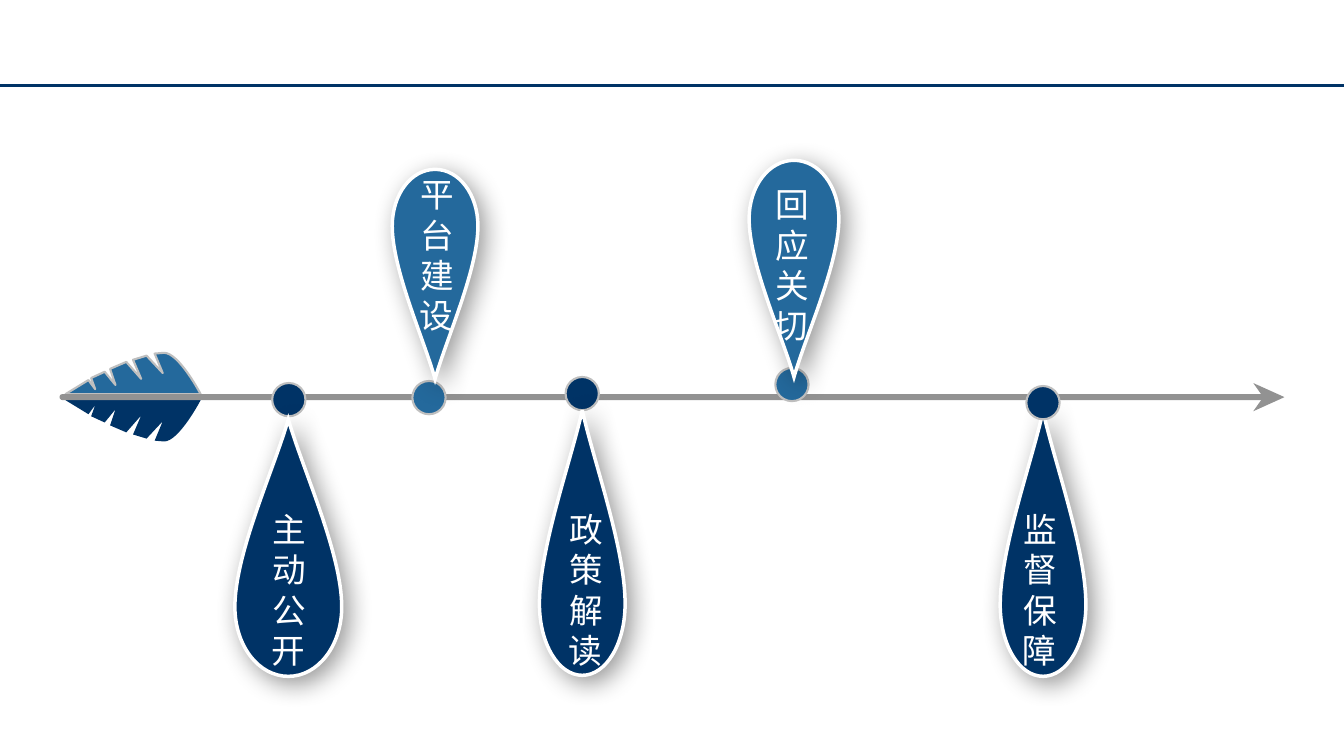
from dataclasses import dataclass

from lxml.etree import SubElement
from pptx import Presentation
from pptx.dml.color import RGBColor
from pptx.enum.shapes import MSO_CONNECTOR, MSO_SHAPE
from pptx.enum.text import MSO_AUTO_SIZE, PP_ALIGN
from pptx.oxml import parse_xml
from pptx.oxml.ns import nsdecls, qn
from pptx.util import Inches, Pt


@dataclass(frozen=True)
class Theme:
    """Colours, font and sizes used on the slide."""
    navy: str = "003366"
    blue: str = "24699C"
    shaft: str = "929292"
    rim: str = "BFBFBF"
    white: str = "FFFFFF"
    font: str = "Noto Sans CJK SC"
    label_size: float = 24
    label_pitch: float = 28.8
    thin: float = 1.5
    rule: float = 2
    thick: float = 2.5


@dataclass(frozen=True)
class Box:
    """A rectangle in inches."""
    left: float
    top: float
    width: float
    height: float

    def lengths(self):
        """Return the four sides as slide lengths."""
        return [Inches(side) for side in (self.left, self.top, self.width, self.height)]

    def corner(self, across, down):
        """Return the place at the given fractions of the box."""
        return Inches(self.left + across * self.width), Inches(self.top + down * self.height)


@dataclass(frozen=True)
class Stop:
    """One labelled stop on the arrow."""
    label: str
    color: str
    dot: Box
    drop: Box
    label_box: Box
    points_down: bool = False
    dot_on_top: bool = False


THEME = Theme()
LABEL_WIDTH, LABEL_HEIGHT, DOT = 0.79, 1.72, 0.33
DROP_START = (0.5, 0)
DROP_SEGMENTS = [
    [(0.37, 0.19), (0, 0.52), (0, 0.73)],
    [(0, 0.88), (0.22, 1), (0.5, 1)],
    [(0.78, 1), (1, 0.88), (1, 0.73)],
    [(1, 0.52), (0.63, 0.19), (0.5, 0)],
]
FEATHER_START = (0.73, 0)
FEATHER_NOTCHES = [
    ((0.66, 0.02), (0.72, 0.49), (0.6, 0.07)),
    ((0.5, 0.17), (0.56, 0.63), (0.45, 0.22)),
    ((0.33, 0.39), (0.37, 0.78), (0.29, 0.46)),
    ((0.19, 0.61), (0.22, 0.88), (0.17, 0.66)),
]
STOPS = [
    Stop("回应关切", THEME.blue, Box(7.69, 3.65, DOT, DOT), Box(7.43, 1.59, 0.89, 2.15),
         Box(7.45, 1.78, LABEL_WIDTH, LABEL_HEIGHT), points_down=True),
    Stop("平台建设", THEME.blue, Box(4.09, 3.78, DOT, DOT), Box(3.89, 1.68, 0.85, 2.08),
         Box(3.92, 1.68, 0.82, LABEL_HEIGHT), points_down=True),
    Stop("主动公开", THEME.navy, Box(2.7, 3.8, DOT, DOT), Box(2.33, 4.16, 1.06, 2.55),
         Box(2.46, 5, LABEL_WIDTH, LABEL_HEIGHT)),
    Stop("政策解读", THEME.navy, Box(5.61, 3.74, DOT, DOT), Box(5.35, 4.07, 0.85, 2.63),
         Box(5.41, 5, LABEL_WIDTH, LABEL_HEIGHT)),
    Stop("监督保障", THEME.navy, Box(10.18, 3.83, DOT, DOT), Box(9.92, 4.08, 0.85, 2.63),
         Box(9.91, 5, LABEL_WIDTH, LABEL_HEIGHT), dot_on_top=True),
]


def feather_segments():
    """Return the lines and curves around half a feather."""
    segments = []
    for edge, tip, back in FEATHER_NOTCHES:
        middle = ((edge[0] + tip[0]) / 2, (edge[1] + tip[1]) / 2)
        segments += [[edge], [middle, tip, tip], [back]]
    return segments + [[(0, 1)], [(1, 1)], [(1, 1), (0.84, 0), FEATHER_START]]


def paint(shape, color, outline=None, width=THEME.thin):
    """Give a shape its fill and outline without a shadow."""
    shape.shadow.inherit = False
    shape.fill.solid()
    shape.fill.fore_color.rgb = RGBColor.from_string(color)
    if outline:
        shape.line.color.rgb = RGBColor.from_string(outline)
        shape.line.width = Pt(width)
    else:
        shape.line.fill.background()


def add_outline(slide, box, start, segments, flipped=False):
    """Draw a closed outline; segments of three points become curves."""
    def place(point):
        return box.corner(point[0], 1 - point[1] if flipped else point[1])

    builder = slide.shapes.build_freeform(*place(start), scale=1.0)
    builder.add_line_segments([place(point) for segment in segments for point in segment])
    shape = builder.convert_to_shape()
    outline = next(shape._element.iter(qn("a:path")))
    lines = iter(outline.findall(qn("a:lnTo")))
    for segment in segments:
        first, *others = [next(lines) for _ in segment]
        if others:
            first.tag = qn("a:cubicBezTo")
            for line in others:
                first.append(line[0])
                outline.remove(line)
    SubElement(outline, qn("a:close"))
    return shape


def add_rule(slide, top, width):
    """Draw the rule under the header."""
    rule = slide.shapes.add_connector(
        MSO_CONNECTOR.STRAIGHT, 0, Inches(top), Inches(width), Inches(top))
    rule.line.color.rgb = RGBColor.from_string(THEME.navy)
    rule.line.width = Pt(THEME.rule)
    SubElement(rule._element.spPr, qn("a:effectLst"))


def add_arrow(slide, box):
    """Draw the feathered arrow inside its box."""
    width, height, thickness = 1.34, 0.41, 0.06
    left = box.left + 0.06
    shaft_top = box.top + height
    upper = add_outline(slide, Box(left, box.top, width, height),
                        FEATHER_START, feather_segments())
    paint(upper, THEME.blue, THEME.rim)
    lower = add_outline(slide, Box(left, shaft_top + thickness, width, height),
                        FEATHER_START, feather_segments(), flipped=True)
    paint(lower, THEME.navy)
    shaft = slide.shapes.add_shape(
        MSO_SHAPE.ROUNDED_RECTANGLE,
        *Box(box.left, shaft_top, box.width - 0.16, thickness).lengths())
    shaft.adjustments[0] = 0.5
    paint(shaft, THEME.shaft)
    head_box = Box(box.left + box.width - 0.31, box.top + 0.3, 0.31, 0.28)
    head = add_outline(slide, head_box, (1, 0.5),
                       [[(0, 1)], [(0.32, 0.5)], [(0, 0)], [(1, 0.5)]])
    paint(head, THEME.shaft)


def add_dot(slide, stop):
    """Draw the round marker of a stop."""
    dot = slide.shapes.add_shape(MSO_SHAPE.OVAL, *stop.dot.lengths())
    paint(dot, stop.color, THEME.rim)


def add_drop(slide, stop):
    """Draw the shadowed drop of a stop."""
    drop = add_outline(slide, stop.drop, DROP_START, DROP_SEGMENTS, stop.points_down)
    paint(drop, stop.color, THEME.white, THEME.thick)
    properties = drop._element.spPr
    SubElement(properties.find(qn("a:ln")), qn("a:miter"), lim="800000")
    properties.find(qn("a:effectLst")).append(parse_xml(
        f'<a:outerShdw {nsdecls("a")} blurRad="{Pt(18)}" dist="{Pt(6)}" dir="2700000" '
        'algn="tl" rotWithShape="0"><a:srgbClr val="000000"><a:alpha val="40000"/>'
        '</a:srgbClr></a:outerShdw>'))


def add_label(slide, stop):
    """Write the label of a stop, one character a line."""
    frame = slide.shapes.add_textbox(*stop.label_box.lengths()).text_frame
    frame.word_wrap = True
    frame.auto_size = MSO_AUTO_SIZE.SHAPE_TO_FIT_TEXT
    frame.margin_left = frame.margin_right = Inches(0.15)
    para = frame.paragraphs[0]
    para.text = stop.label
    para.alignment = PP_ALIGN.CENTER
    para.line_spacing = Pt(THEME.label_pitch)
    para.font.size = Pt(THEME.label_size)
    para.font.color.rgb = RGBColor.from_string(THEME.white)
    para.font.name = THEME.font
    defaults = para._p.pPr.find(qn("a:defRPr"))
    defaults.set("spc", "-150")
    SubElement(defaults, qn("a:ea"), typeface=THEME.font)


def add_stop(slide, stop):
    """Draw the marker, drop and label of a stop."""
    parts = [add_drop, add_dot] if stop.dot_on_top else [add_dot, add_drop]
    for add_part in parts + [add_label]:
        add_part(slide, stop)


def main():
    """Build and save the deck."""
    deck = Presentation()
    deck.slide_width, deck.slide_height = Inches(13.33), Inches(7.5)
    slide = deck.slides.add_slide(deck.slide_layouts[6])
    add_rule(slide, 0.85, 13.33)
    add_arrow(slide, Box(0.59, 3.5, 12.15, 0.88))
    for stop in STOPS:
        add_stop(slide, stop)
    deck.save("out.pptx")


if __name__ == "__main__":
    main()
